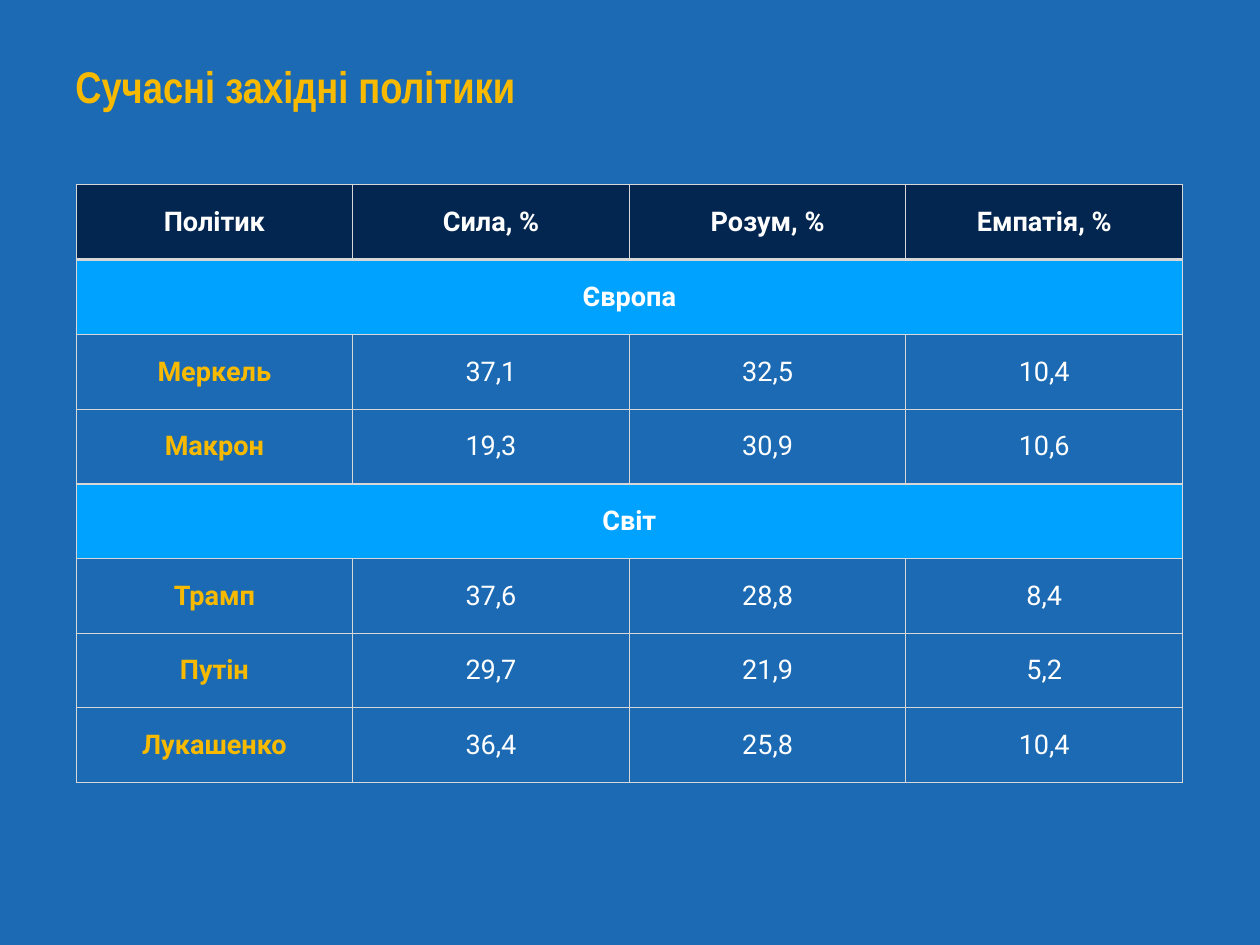
from lxml import etree
from pptx import Presentation
from pptx.dml.color import RGBColor
from pptx.enum import text
from pptx.oxml import ns
from pptx.util import Cm, Pt

BLUE = RGBColor(0x1B, 0x6A, 0xB3)
NAVY = RGBColor(0x03, 0x26, 0x50)
SKY = RGBColor(0x00, 0xA2, 0xFF)
GOLD = RGBColor(0xF8, 0xBA, 0x00)
WHITE = RGBColor(0xFF, 0xFF, 0xFF)
GREY = RGBColor(0xD6, 0xD7, 0xD6)

INSET = Cm(0.15)
COLUMN_WIDTH = Cm(7.93)
TALL_ROW, ROW = Cm(2.16), Cm(2.14)

# A row with a single entry is a region heading across all columns.
ROWS = [
    ["Політик", "Сила, %", "Розум, %", "Емпатія, %"],
    ["Європа"],
    ["Меркель", "37,1", "32,5", "10,4"],
    ["Макрон", "19,3", "30,9", "10,6"],
    ["Світ"],
    ["Трамп", "37,6", "28,8", "8,4"],
    ["Путін", "29,7", "21,9", "5,2"],
    ["Лукашенко", "36,4", "25,8", "10,4"],
]


def style_font(font, name, size, color, bold):
    font.name = name
    font.size = Pt(size)
    font.bold = bold
    font.color.rgb = color


def set_insets(holder):
    holder.margin_left = holder.margin_right = INSET
    holder.margin_top = holder.margin_bottom = INSET


def add_title(page, words):
    title = page.shapes.title
    title.left, title.top = Cm(2.01), Cm(1.55)
    title.width, title.height = Cm(33.4), Cm(1.83)
    frame = title.text_frame
    frame.text = words
    frame.word_wrap = True
    frame.auto_size = text.MSO_AUTO_SIZE.NONE
    frame.vertical_anchor = text.MSO_ANCHOR.MIDDLE
    set_insets(frame)
    para = frame.paragraphs[0]
    para.alignment = text.PP_ALIGN.LEFT
    style_font(para.runs[0].font, "Arial Narrow", 36, GOLD, True)


def add_border(cell, side, points):
    """Draw one side (L, R, T or B) of a cell; call in that order, before the fill."""
    properties = cell._tc.get_or_add_tcPr()
    line = etree.SubElement(properties, ns.qn(f"a:ln{side}"), w=str(Pt(points)))
    fill = etree.SubElement(line, ns.qn("a:solidFill"))
    etree.SubElement(fill, ns.qn("a:srgbClr"), val=str(GREY))


def fill_cell(cell, color):
    if color is None:
        cell.fill.background()
    else:
        cell.fill.solid()
        cell.fill.fore_color.rgb = color


def write_cell(cell, words, color, bold):
    cell.vertical_anchor = text.MSO_ANCHOR.MIDDLE
    set_insets(cell)
    cell.text_frame.text = words
    para = cell.text_frame.paragraphs[0]
    para.alignment = text.PP_ALIGN.CENTER
    style_font(para.runs[0].font, "Roboto", 22, color, bold)


def add_ratings_table(page):
    columns = len(ROWS[0])
    heights = [TALL_ROW] * 2 + [ROW] * (len(ROWS) - 2)
    frame = page.shapes.add_table(len(ROWS), columns, Cm(2.18), Cm(5.28),
                                  COLUMN_WIDTH * columns, sum(heights))
    table = frame.table
    table.first_row = table.horz_banding = False
    for column in table.columns:
        column.width = COLUMN_WIDTH

    for row, entries in enumerate(ROWS):
        table.rows[row].height = heights[row]
        is_header, is_region = row == 0, len(entries) == 1
        if is_region:
            table.cell(row, 0).merge(table.cell(row, columns - 1))
        background = NAVY if is_header else SKY if is_region else None
        for column in range(columns):
            cell = table.cell(row, column)
            for side in "RTB" if cell.is_spanned else "LRTB":
                add_border(cell, side, 2 if is_header and side == "B" else 1)
            fill_cell(cell, background)
            if column < len(entries):
                is_name = column == 0 and background is None
                write_cell(cell, entries[column], GOLD if is_name else WHITE,
                           is_name or background is not None)


def main():
    deck = Presentation()
    deck.slide_width, deck.slide_height = Cm(36.12), Cm(27.1)
    page = deck.slides.add_slide(deck.slide_layouts[5])
    page.background.fill.solid()
    page.background.fill.fore_color.rgb = BLUE
    add_title(page, "Сучасні західні політики")
    add_ratings_table(page)
    deck.save("out.pptx")


if __name__ == "__main__":
    main()
